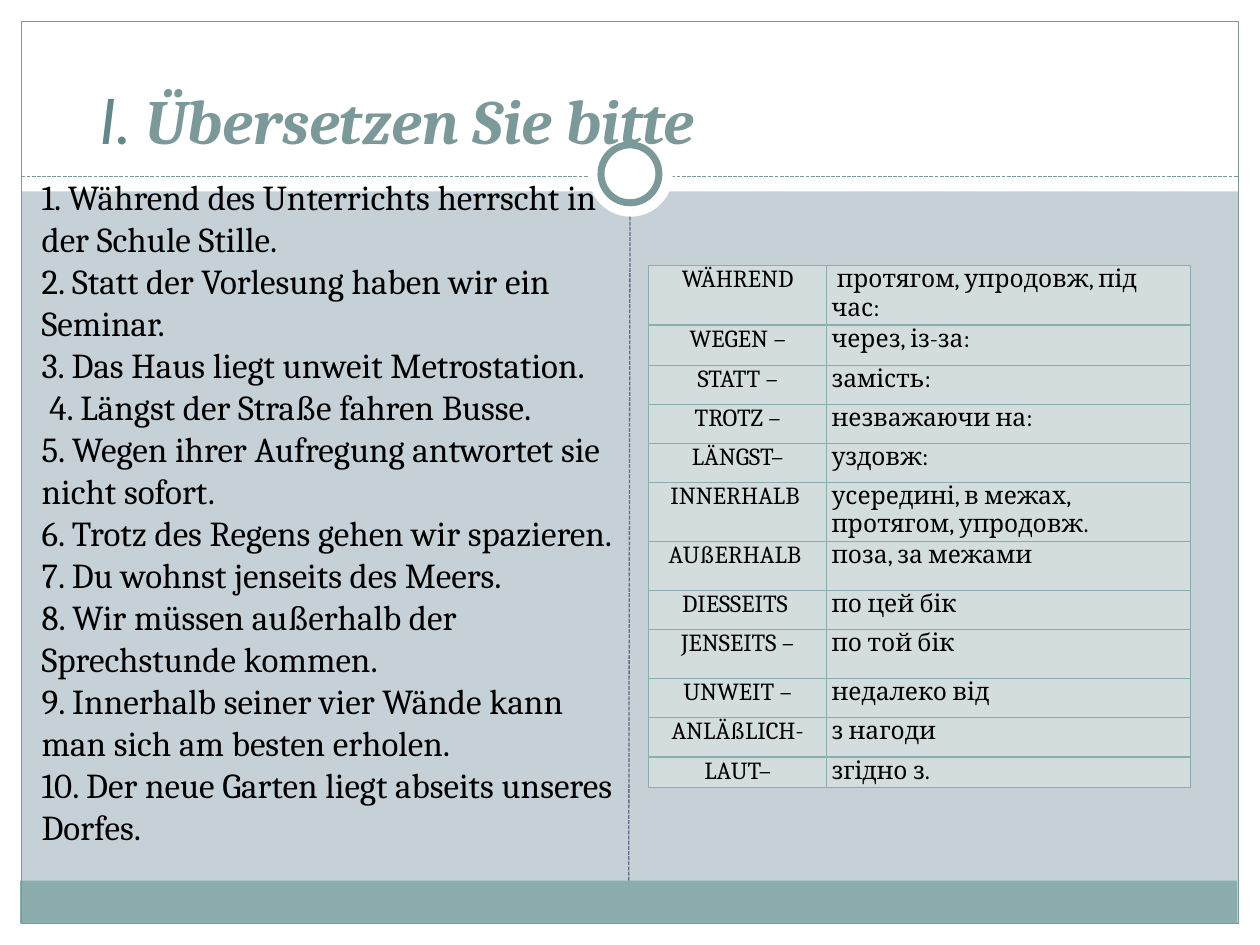
from lxml.etree import SubElement
from pptx import Presentation
from pptx.dml.color import RGBColor
from pptx.enum.dml import MSO_LINE
from pptx.enum.shapes import MSO_CONNECTOR, MSO_SHAPE
from pptx.enum.text import MSO_ANCHOR, MSO_AUTO_SIZE, PP_ALIGN
from pptx.oxml import parse_xml
from pptx.oxml.ns import nsdecls, qn
from pptx.util import Inches, Pt

THEME = {
    "font": "Cambria", "accent_font": "Lato",
    "title": 36, "body": 20, "cell": 14,
    "bg": "C5D1D7", "white": "FFFFFF", "text": "000000",
    "teal": "7C999A", "numeral": "61898A", "band": "8CADAE",
    "divider": "646B86", "cell_fill": "D4DDDD",
}


def rgb(key):
    return RGBColor.from_string(THEME[key])


def add_run(p, text, size, color, **font):
    r = p.add_run()
    r.text = text
    values = {"name": THEME["font"], "size": Pt(THEME[size]), **font}
    for name, value in values.items():
        setattr(r.font, name, value)
    r.font.color.rgb = rgb(color)


prs = Presentation()
prs.slide_width, prs.slide_height = Inches(10), Inches(7.5)
s = prs.slides.add_slide(prs.slide_layouts[1])
s.background.fill.solid()
s.background.fill.fore_color.rgb = rgb("bg")

# Page margins, footer band, frame, rules and ring: kind, box, fill, line width
RECT, OVAL, LINE = MSO_SHAPE.RECTANGLE, MSO_SHAPE.OVAL, MSO_CONNECTOR.STRAIGHT
decor = [
    (RECT, (0, 7.33, 10, 0.17), "white", 0),
    (RECT, (0, 0, 10, 1.52), "white", 0),
    (RECT, (0, 0, 0.17, 7.5), "white", 0),
    (RECT, (9.83, 0, 0.17, 7.5), "white", 0),
    (RECT, (0.16, 6.99, 9.66, 0.34), "band", 0),
    (RECT, (0.17, 0.17, 9.66, 7.16), None, 0.75),
    (LINE, (0.17, 1.4, 9.83, 1.4), "teal", 0.75),
    (OVAL, (4.67, 1.05, 0.67, 0.67), "white", 0),
    (OVAL, (4.77, 1.15, 0.46, 0.46), "white", 4),
    (LINE, (4.99, 6.99, 5, 1.72), "divider", 0.75),
]
for kind, box, color, width in decor:
    box = [Inches(v) for v in box]
    if kind is LINE:
        line = s.shapes.add_connector(kind, *box)
        line.line.color.rgb = rgb(color)
        line.line.width = Pt(width)
        line.line.dash_style = MSO_LINE.SQUARE_DOT
        SubElement(line.element.spPr, qn("a:effectLst"))
        continue
    sp = s.shapes.add_shape(kind, *box)
    sp.shadow.inherit = False
    if color:
        sp.fill.solid()
        sp.fill.fore_color.rgb = rgb(color)
    else:
        sp.fill.background()
    if width:
        sp.line.color.rgb = rgb("teal")
        sp.line.width = Pt(width)
    else:
        sp.line.fill.background()

# Placeholders, brought in front of the decoration
title, body = s.shapes.title, s.placeholders[1]
for sp, box, anchor, inset in [
    (title, (0.31, 0.47, 9.33, 0.83), MSO_ANCHOR.BOTTOM, 0.48),
    (body, (0.23, 1.34, 4.77, 6.16), MSO_ANCHOR.TOP, 0.1),
]:
    sp.left, sp.top, sp.width, sp.height = [Inches(v) for v in box]
    tf = sp.text_frame
    for name, value in {"word_wrap": True, "auto_size": MSO_AUTO_SIZE.NONE,
                        "vertical_anchor": anchor,
                        "margin_left": Inches(inset)}.items():
        setattr(tf, name, value)
    sp.element.getparent().append(sp.element)

# Title
p = title.text_frame.paragraphs[0]
p.alignment = PP_ALIGN.LEFT
add_run(p, "І. ", "title", "numeral", name=THEME["accent_font"], italic=True)
add_run(p, "Übersetzen Sie bitte", "title", "teal", bold=True, italic=True)

# Sentences to translate
sentences = [
    "1. Während des Unterrichts herrscht in der Schule Stille.",
    "2. Statt der Vorlesung haben wir ein Seminar.",
    "3. Das Haus liegt unweit Metrostation.",
    " 4. Längst der Straße fahren Busse.",
    "5. Wegen ihrer Aufregung antwortet sie nicht sofort.",
    "6. Trotz des Regens gehen wir spazieren.",
    "7. Du wohnst jenseits des Meers.",
    "8. Wir müssen außerhalb der Sprechstunde kommen.",
    "9. Innerhalb seiner vier Wände kann man sich am besten erholen.",
    "10. Der neue Garten liegt abseits unseres Dorfes.",
]
tf = body.text_frame
for i, sentence in enumerate(sentences):
    p = tf.add_paragraph() if i else tf.paragraphs[0]
    p.space_before = Pt(0)
    pPr = p._p.get_or_add_pPr()
    pPr.set("marL", "0")
    pPr.set("indent", "0")
    SubElement(pPr, qn("a:buNone"))
    add_run(p, sentence, "body", "text")

# Preposition table: German, Ukrainian, row height
rows = [
    ("WÄHREND", " протягом, упродовж, під час:", 0.47),
    ("WEGEN –", "через, із-за:", 0.32),
    ("STATT –", "замість:", 0.31),
    ("TROTZ –", "незважаючи на:", 0.31),
    ("LÄNGST–", "уздовж:", 0.31),
    ("INNERHALB ", "усередині, в межах, протягом, упродовж.", 0.47),
    ("AUßERHALB ", "поза, за межами", 0.39),
    ("DIESSEITS ", "по цей бік", 0.31),
    ("JENSEITS –", "по той бік", 0.39),
    ("UNWEIT –", "недалеко від", 0.31),
    ("ANLÄßLICH-", "з нагоди", 0.31),
    ("LAUT–", "згідно з.", 0.24),
]
table_height = sum(height for *_, height in rows)
table = s.shapes.add_table(len(rows), 2, Inches(5.15), Inches(2.11),
                           Inches(4.3), Inches(table_height)).table
table.first_row = table.horz_banding = False
for col, width in zip(table.columns, (1.41, 2.89)):
    col.width = Inches(width)
cell_format = {"margin_left": Inches(0.04), "margin_right": Inches(0.04),
               "margin_top": 0, "margin_bottom": 0}
for i, (german, ukrainian, height) in enumerate(rows):
    table.rows[i].height = Inches(height)
    for j, text in enumerate((german, ukrainian)):
        cell = table.cell(i, j)
        for name, value in cell_format.items():
            setattr(cell, name, value)
        cell.fill.solid()
        cell.fill.fore_color.rgb = rgb("cell_fill")
        for k, side in enumerate(("lnL", "lnR", "lnT", "lnB")):
            cell._tc.tcPr.insert(k, parse_xml(
                f'<a:{side} {nsdecls("a")} w="{Pt(0.75)}"><a:solidFill>'
                f'<a:srgbClr val="{THEME["band"]}"/></a:solidFill></a:{side}>'))
        p = cell.text_frame.paragraphs[0]
        p.alignment = PP_ALIGN.LEFT if j else PP_ALIGN.CENTER
        add_run(p, text, "cell", "text")

prs.save("out.pptx")
